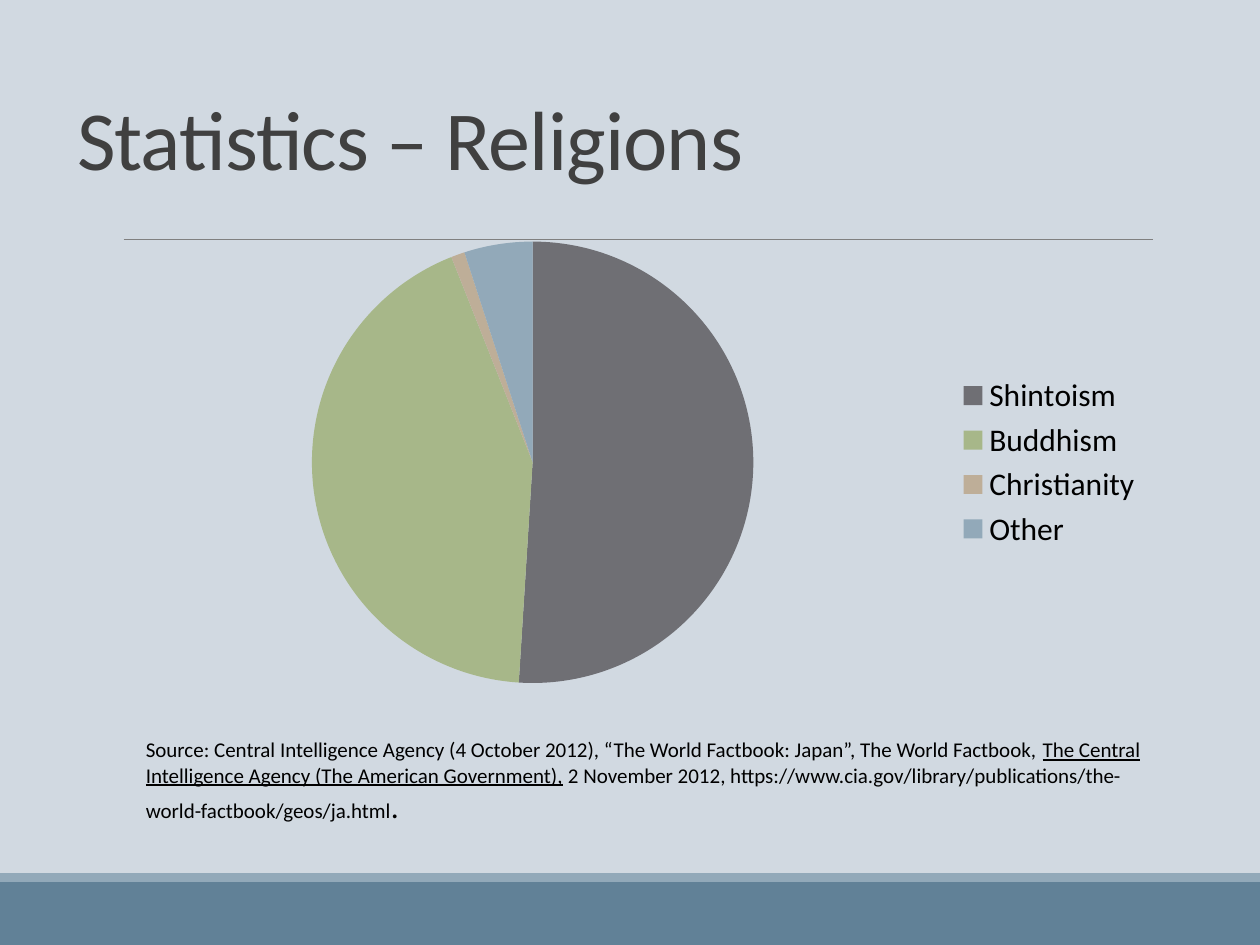
from dataclasses import dataclass

from lxml.etree import SubElement
from pptx import Presentation
from pptx.chart.data import CategoryChartData
from pptx.dml.color import RGBColor
from pptx.enum.chart import XL_CHART_TYPE, XL_LEGEND_POSITION
from pptx.enum.shapes import MSO_CONNECTOR, MSO_SHAPE
from pptx.enum.text import MSO_ANCHOR, MSO_AUTO_SIZE, PP_ALIGN
from pptx.oxml.ns import qn
from pptx.slide import Slide
from pptx.text.text import _Paragraph
from pptx.util import Cm, Pt

FONT = "Calibri"
COLORS = {
    "background": "D1D9E1",
    "footer": "618197",
    "blue": "92A9B9",
    "rule": "808080",
    "title": "404040",
    "text": "000000",
    "gray": "6F6F74",
    "green": "A7B789",
    "tan": "BEAE98",
}


@dataclass
class Band:
    top: float
    height: float
    color: str


@dataclass
class Religion:
    name: str
    share: int
    color: str


BANDS = [Band(17.78, 1.27, "footer"), Band(17.6, 0.18, "blue")]
RELIGIONS = [
    Religion("Shintoism", 51, "gray"),
    Religion("Buddhism", 43, "green"),
    Religion("Christianity", 1, "tan"),
    Religion("Other", 5, "blue"),
]


def rgb(name: str) -> RGBColor:
    return RGBColor.from_string(COLORS[name])


def add_text(paragraph: _Paragraph, text: str, *, size: float, color: str = "text",
             underline: bool = False, spacing: float = 0) -> None:
    """Append a formatted run; spacing is the letter spacing in points."""
    run = paragraph.add_run()
    run.text = text
    run.font.name = FONT
    run.font.size = Pt(size)
    run.font.color.rgb = rgb(color)
    run.font.underline = underline
    if spacing:
        run.font._element.set("spc", str(round(spacing * 100)))


def add_band(slide: Slide, band: Band, width: int) -> None:
    strip = slide.shapes.add_shape(
        MSO_SHAPE.RECTANGLE, 0, Cm(band.top), width, Cm(band.height))
    strip.shadow.inherit = False
    strip.fill.solid()
    strip.fill.fore_color.rgb = rgb(band.color)
    strip.line.fill.background()


def add_rule(slide: Slide) -> None:
    rule = slide.shapes.add_connector(
        MSO_CONNECTOR.STRAIGHT, Cm(2.49), Cm(4.83), Cm(23.24), Cm(4.83))
    rule.line.color.rgb = rgb("rule")
    rule.line.width = Pt(0.5)
    SubElement(rule._element.spPr, qn("a:effectLst"))


def add_title(slide: Slide, text: str) -> None:
    title = slide.shapes.title
    title.left, title.top, title.width, title.height = Cm(1.3), Cm(0.74), Cm(22.86), Cm(3.18)
    frame = title.text_frame
    frame.auto_size = MSO_AUTO_SIZE.NONE
    frame.vertical_anchor = MSO_ANCHOR.BOTTOM
    heading = frame.paragraphs[0]
    heading.alignment = PP_ALIGN.LEFT
    heading.line_spacing = 0.85
    add_text(heading, text, size=48, color="title", spacing=-0.5)


def add_religion_chart(slide: Slide) -> None:
    shares = CategoryChartData()
    shares.categories = [religion.name for religion in RELIGIONS]
    shares.add_series("Series 1", [religion.share for religion in RELIGIONS])
    chart = slide.shapes.add_chart(
        XL_CHART_TYPE.PIE, Cm(2.26), Cm(4.52), Cm(21.03), Cm(9.6), shares).chart
    chart.has_title = False
    chart.font.name = FONT
    chart.font.size = Pt(18)
    chart.font.color.rgb = rgb("text")
    chart.has_legend = True
    chart.legend.position = XL_LEGEND_POSITION.RIGHT
    chart.legend.include_in_layout = False
    pie = chart.plots[0]
    pie.vary_by_categories = True
    for index, religion in enumerate(RELIGIONS):
        slice_fill = pie.series[0].points[index].format.fill
        slice_fill.solid()
        slice_fill.fore_color.rgb = rgb(religion.color)


def add_source(slide: Slide) -> None:
    frame = slide.shapes.add_textbox(Cm(2.69), Cm(14.73), Cm(20.6), Cm(2.06)).text_frame
    frame.word_wrap = True
    frame.auto_size = MSO_AUTO_SIZE.SHAPE_TO_FIT_TEXT
    citation = frame.paragraphs[0]
    add_text(citation, "Source: Central Intelligence Agency (4 October 2012), "
             "“The World Factbook: Japan”, The World Factbook, ", size=12)
    add_text(citation, "The Central Intelligence Agency (The American Government),",
             size=12, underline=True)
    add_text(citation, " 2 November 2012, https://www.cia.gov/library/publications/"
             "the-world-factbook/geos/ja.html", size=12)
    add_text(citation, ".", size=18)


def main() -> None:
    deck = Presentation()
    deck.slide_width, deck.slide_height = Cm(25.4), Cm(19.05)
    slide = deck.slides.add_slide(deck.slide_layouts.get_by_name("Title Only"))
    slide.background.fill.solid()
    slide.background.fill.fore_color.rgb = rgb("background")
    for band in BANDS:
        add_band(slide, band, deck.slide_width)
    add_rule(slide)
    add_title(slide, "Statistics – Religions")
    add_religion_chart(slide)
    add_source(slide)
    deck.save("out.pptx")


if __name__ == "__main__":
    main()
